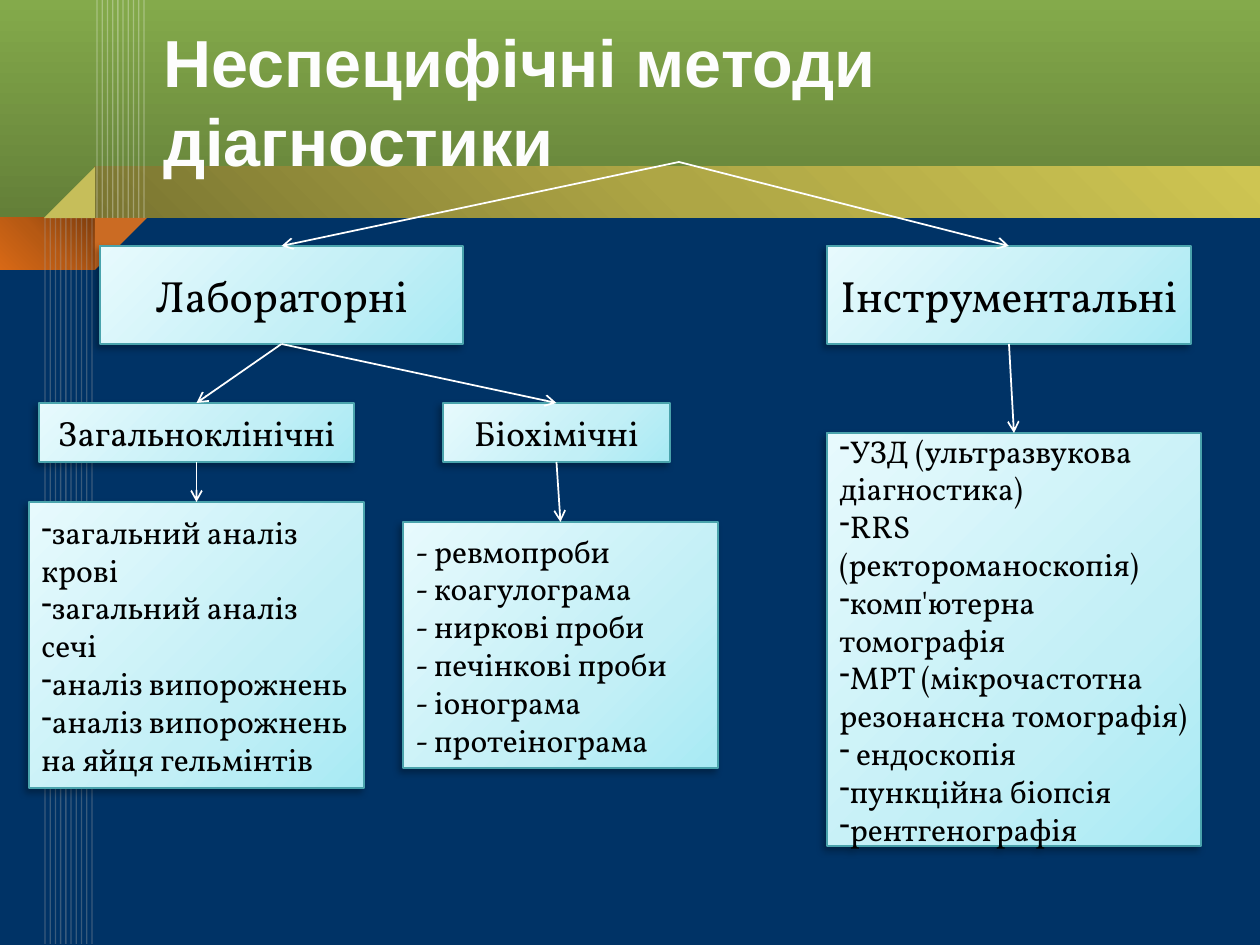
from lxml import etree
from pptx import Presentation
from pptx.dml.color import RGBColor
from pptx.enum.shapes import MSO_CONNECTOR, MSO_SHAPE
from pptx.enum.text import MSO_ANCHOR, PP_ALIGN
from pptx.oxml.ns import qn
from pptx.util import Emu, Pt

RECTANGLE, TRIANGLE = MSO_SHAPE.RECTANGLE, MSO_SHAPE.RIGHT_TRIANGLE
STRAIGHT, MIDDLE = MSO_CONNECTOR.STRAIGHT, MSO_ANCHOR.MIDDLE
LEFT, CENTER = PP_ALIGN.LEFT, PP_ALIGN.CENTER
TOP_SIDE, BOTTOM_SIDE = 0, 2
EMU_PER_PX = 914400 / 126

# Content
TITLE = ("Неспецифічні методи діагностики", (151, 39, 1056, 123))
# name: (place, text size, alignment, bullet, paragraphs)
BOXES = {
    "laboratory": ((100, 246, 363, 98), 25, CENTER, None, ["Лабораторні"]),
    "instrumental": ((827, 246, 364, 98), 25, CENTER, None, ["Інструментальні"]),
    "clinical": ((39, 403, 315, 59), 20, CENTER, None, ["Загальноклінічні"]),
    "biochemical": ((443, 403, 227, 59), 20, CENTER, None, ["Біохімічні"]),
    "clinical list": ((29, 502, 335, 286), 18, LEFT, "-", [
        "загальний аналіз крові", "загальний аналіз сечі",
        "аналіз випорожнень", "аналіз випорожнень на яйця гельмінтів"]),
    "biochemical list": ((403, 522, 315, 246), 18, LEFT, None, [
        "- ревмопроби", "- коагулограма", "- ниркові проби",
        "- печінкові проби", "- іонограма", "- протеінограма"]),
    "instrumental list": ((827, 433, 374, 413), 18, LEFT, "-", [
        "УЗД (ультразвукова діагностика)", "RRS (ректороманоскопія)",
        "комп'ютерна томографія", "МРТ (мікрочастотна резонансна томографія)",
        " ендоскопія", "пункційна біопсія", "рентгенографія"]),
}
ARROWS = [
    ("title", "laboratory"), ("title", "instrumental"),
    ("laboratory", "clinical"), ("laboratory", "biochemical"),
    ("instrumental", "instrumental list"), ("clinical", "clinical list"),
    ("biochemical", "biochemical list"),
]

# Decoration: gradients are (stops, angle), no angle means from the top right corner
BOX_GRADIENT = ([(0, "A8EAF4"), (35, "C2EFF6"), (100, "E7FAFD")], 225)
BANDS = [
    ((0, 0, 1260, 218), ([(0, "84AA4B"), (100, "637F38")], 90)),
    ((94, 167, 1166, 51), ([(0, "7A7531"), (50, "AEA645"), (100, "CEC552")], 315)),
    ((0, 218, 95, 52), ([(0, "803E0D"), (50, "B65913"), (100, "D86916")], None)),
]
FOLDS = [((95, 218, 52, 52), 90, "CB6B23"), ((44, 167, 51, 51), 270, "C6BE5A")]
# first x, top, bottom, colour, opacity in percent
STRIPES = [(97, 0, 218, "FFFFFF", 30), (45, 218, 944, "A6A6A6", 35)]
STRIPE_COUNT, STRIPE_SPAN = 10, 47


def px(value):
    return Emu(round(value * EMU_PER_PX))


def color(hex_value):
    return RGBColor.from_string(hex_value)


def add_xml(parent, tag, **attributes):
    return etree.SubElement(parent, qn(tag),
                            {key: str(value) for key, value in attributes.items()})


def set_gradient(shape, stops, angle):
    shape.fill.background()
    properties = shape._element.spPr
    gradient = etree.Element(qn("a:gradFill"), rotWithShape="1")
    stop_list = add_xml(gradient, "a:gsLst")
    for position, hex_value in stops:
        stop = add_xml(stop_list, "a:gs", pos=position * 1000)
        add_xml(stop, "a:srgbClr", val=hex_value)
    if angle is None:
        circle = add_xml(gradient, "a:path", path="circle")
        add_xml(circle, "a:fillToRect", l=100000, b=100000)
    else:
        add_xml(gradient, "a:lin", ang=angle * 60000, scaled=0)
    properties.replace(properties.find(qn("a:noFill")), gradient)


def add_shape(slide, kind, place):
    shape = slide.shapes.add_shape(kind, *map(px, place))
    shape.shadow.inherit = False
    shape.line.fill.background()
    return shape


def add_line(slide, start, end, hex_value, width):
    line = slide.shapes.add_connector(STRAIGHT, *map(px, start + end))
    line.line.color.rgb = color(hex_value)
    line.line.width = Pt(width)
    add_xml(line._element.spPr, "a:effectLst")
    return line


def write_text(shape, paragraphs, alignment, bullet, **font_format):
    frame = shape.text_frame
    frame.word_wrap = True
    frame.vertical_anchor = MIDDLE
    hex_value = font_format.pop("hex_value")
    for index, text in enumerate(paragraphs):
        paragraph = frame.add_paragraph() if index else frame.paragraphs[0]
        paragraph.alignment = alignment
        if bullet:
            properties = paragraph._p.get_or_add_pPr()
            properties.set("marL", "0")
            properties.set("indent", "0")
            add_xml(properties, "a:buFontTx")
            add_xml(properties, "a:buChar", char=bullet)
        run = paragraph.add_run()
        run.text = text
        for name, value in font_format.items():
            setattr(run.font, name, value)
        run.font.color.rgb = color(hex_value)


def add_box(slide, place, size, alignment, bullet, paragraphs):
    box = add_shape(slide, RECTANGLE, place)
    set_gradient(box, *BOX_GRADIENT)
    box.line.color.rgb = color("4AA3AC")
    box.line.width = Pt(1)
    effects = box._element.spPr.find(qn("a:effectLst"))
    shadow = add_xml(effects, "a:outerShdw", blurRad=Pt(4), dist=Pt(3),
                     dir=135 * 60000, rotWithShape=0)
    shadow_color = add_xml(shadow, "a:srgbClr", val="000000")
    add_xml(shadow_color, "a:alpha", val=30000)
    write_text(box, paragraphs, alignment, bullet, size=Pt(size),
               name="Vollkorn", hex_value="000000")
    return box


def add_decoration(slide):
    for place, gradient in BANDS:
        set_gradient(add_shape(slide, RECTANGLE, place), *gradient)
    for place, rotation, hex_value in FOLDS:
        fold = add_shape(slide, TRIANGLE, place)
        fold.rotation = rotation
        fold.fill.solid()
        fold.fill.fore_color.rgb = color(hex_value)
    for first_x, top, bottom, hex_value, opacity in STRIPES:
        for index in range(STRIPE_COUNT):
            x = first_x + index * STRIPE_SPAN / (STRIPE_COUNT - 1)
            stripe = add_line(slide, (x, top), (x, bottom), hex_value, 0.75)
            stripe_color = stripe._element.spPr.find(".//" + qn("a:srgbClr"))
            add_xml(stripe_color, "a:alpha", val=opacity * 1000)


def main():
    presentation = Presentation()
    presentation.slide_width, presentation.slide_height = px(1260), px(945)
    slide = presentation.slides.add_slide(presentation.slide_layouts[6])
    slide.background.fill.solid()
    slide.background.fill.fore_color.rgb = color("003366")
    add_decoration(slide)

    # Title and boxes
    title_text, title_place = TITLE
    title = slide.shapes.add_textbox(*map(px, title_place))
    write_text(title, [title_text], LEFT, None, size=Pt(38), bold=True,
               name="Arial", hex_value="FDFDFD")
    shapes = {"title": title}
    for name, box in BOXES.items():
        shapes[name] = add_box(slide, *box)

    # Arrows run from bottom side to top side
    for source, target in ARROWS:
        arrow = add_line(slide, (0, 0), (0, 0), "FFFFFF", 1)
        arrow.begin_connect(shapes[source], BOTTOM_SIDE)
        arrow.end_connect(shapes[target], TOP_SIDE)
        add_xml(arrow.line._get_or_add_ln(), "a:tailEnd", type="arrow")

    presentation.save("out.pptx")


if __name__ == "__main__":
    main()
